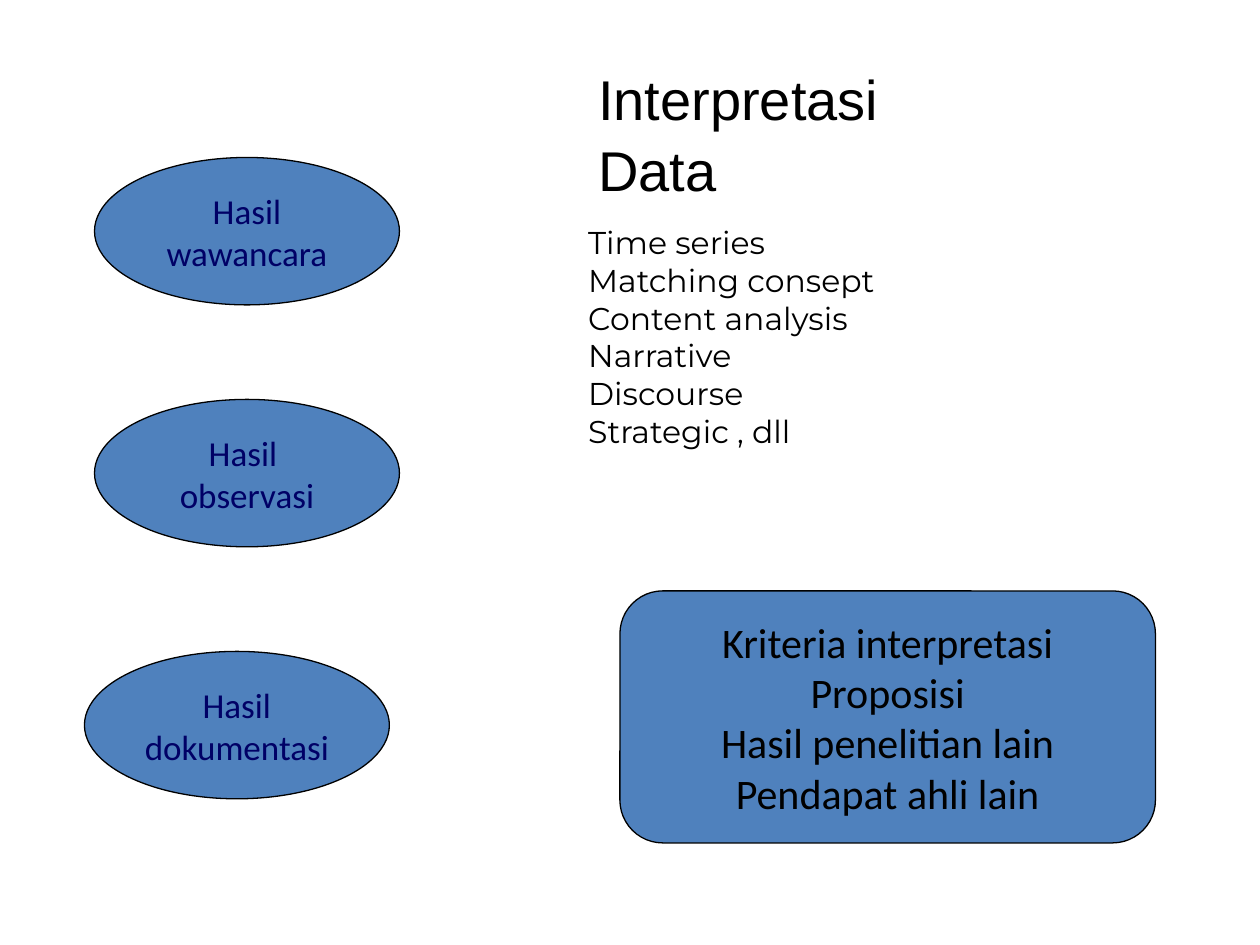
import pptx
import pptx.util
import pptx.dml.color
import pptx.enum.shapes
import pptx.enum.text

Inches, Pt = pptx.util.Inches, pptx.util.Pt
MSO_SHAPE = pptx.enum.shapes.MSO_SHAPE
PP_ALIGN = pptx.enum.text.PP_ALIGN
MSO_ANCHOR = pptx.enum.text.MSO_ANCHOR

COLORS = {"fill": "4F81BD", "ink": "000000", "navy": "000066"}

TITLE = ["Interpretasi Data"]
METHODS = ["Time series", "Matching consept", "Content analysis",
           "Narrative", "Discourse", "Strategic , dll"]
CRITERIA = ["Kriteria interpretasi", "Proposisi",
            "Hasil penelitian lain", "Pendapat ahli lain"]
# left, top, lines
SOURCES = [
    (0.75, 1.25, ["Hasil", "wawancara"]),
    (0.75, 3.17, ["Hasil ", "observasi"]),
    (0.67, 5.17, ["Hasil", "dokumentasi"]),
]
SOURCE_SIZE = (2.42, 1.17)


def rgb(name):
    return pptx.dml.color.RGBColor.from_string(COLORS[name])


def write(frame, lines, font, size, color, align, spacing=None):
    """Put one paragraph per line into the frame."""
    for i, line in enumerate(lines):
        paragraph = frame.paragraphs[0] if i == 0 else frame.add_paragraph()
        paragraph.text = line
        paragraph.alignment = align
        paragraph.line_spacing = spacing
        paragraph.font.name = font
        paragraph.font.size = Pt(size)
        paragraph.font.color.rgb = rgb(color)


def add_node(slide, kind, box, lines, size, color):
    node = slide.shapes.add_shape(kind, *map(Inches, box))
    node.shadow.inherit = False
    node.fill.solid()
    node.fill.fore_color.rgb = rgb("fill")
    node.line.color.rgb = rgb("ink")
    node.line.width = Pt(0.75)
    node.text_frame.word_wrap = False
    node.text_frame.vertical_anchor = MSO_ANCHOR.MIDDLE
    write(node.text_frame, lines, "Calibri", size, color, PP_ALIGN.CENTER)
    return node


def add_text(slide, box, lines, font, size, spacing=None):
    frame = slide.shapes.add_textbox(*map(Inches, box)).text_frame
    frame.word_wrap = True
    write(frame, lines, font, size, "ink", PP_ALIGN.LEFT, spacing)


def main():
    deck = pptx.Presentation()
    deck.slide_width, deck.slide_height = Inches(10), Inches(7.5)
    slide = deck.slides.add_slide(deck.slide_layouts[6])

    for left, top, lines in SOURCES:
        add_node(slide, MSO_SHAPE.OVAL, (left, top, *SOURCE_SIZE), lines, 20, "navy")

    add_text(slide, (4.65, 0.43, 3.2, 1.17), TITLE, "Arial", 32, 1.06)
    add_text(slide, (4.57, 1.72, 2.66, 1.92), METHODS, "Montserrat", 18)

    criteria = add_node(slide, MSO_SHAPE.ROUNDED_RECTANGLE,
                        (4.92, 4.69, 4.25, 2), CRITERIA, 24, "ink")
    criteria.adjustments[0] = 0.17

    deck.save("out.pptx")


if __name__ == "__main__":
    main()
